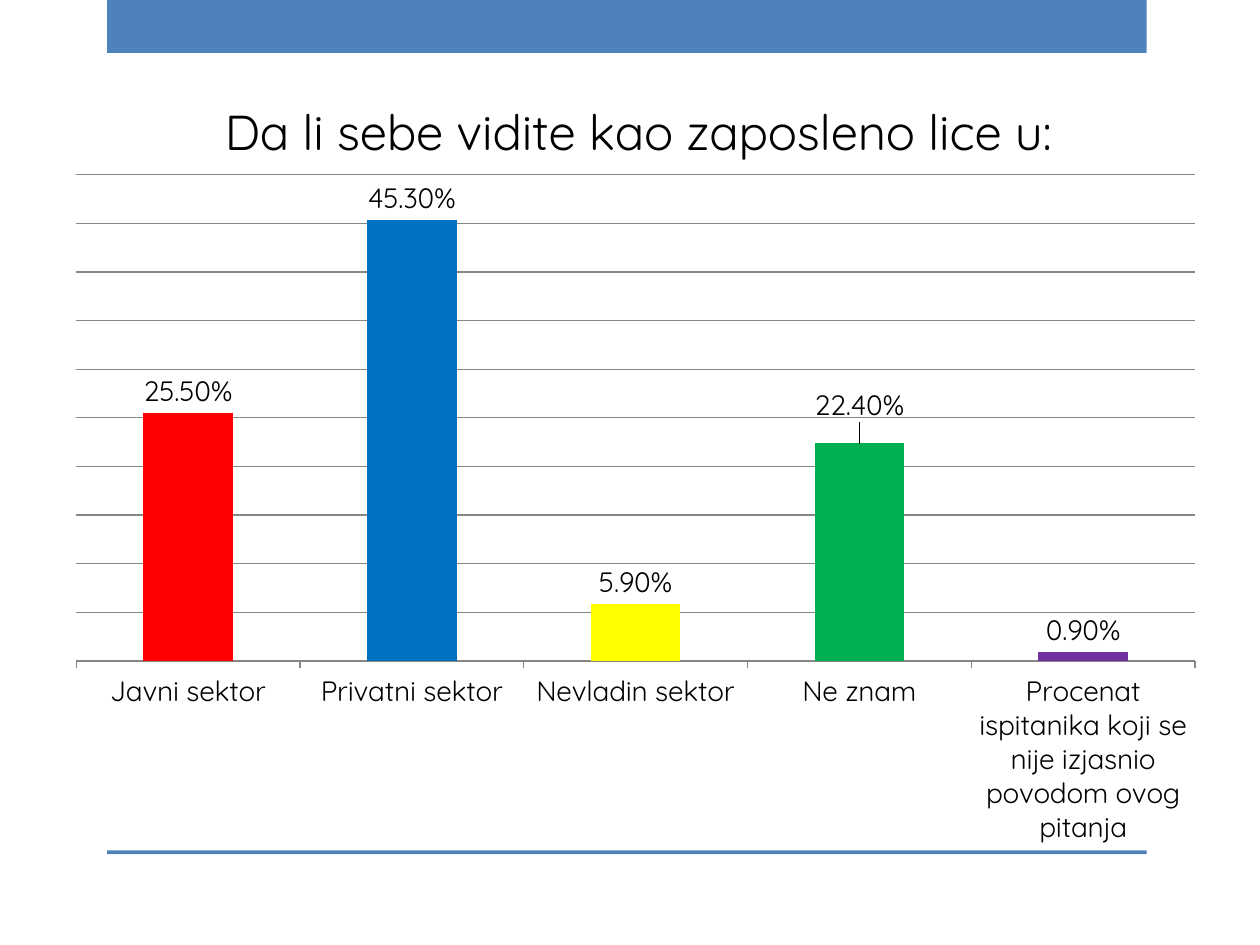
from lxml import etree
from pptx import Presentation
from pptx.chart.data import CategoryChartData
from pptx.dml.color import RGBColor
from pptx.enum.chart import XL_CHART_TYPE, XL_LABEL_POSITION, XL_TICK_MARK
from pptx.enum.shapes import MSO_SHAPE
from pptx.oxml.ns import qn
from pptx.util import Pt

COLUMNS = XL_CHART_TYPE.COLUMN_CLUSTERED
OUTSIDE_END = XL_LABEL_POSITION.OUTSIDE_END
TICK_OUT = XL_TICK_MARK.OUTSIDE
TICK_NONE = XL_TICK_MARK.NONE
RECTANGLE = MSO_SHAPE.RECTANGLE

PX = 9144  # 100 px to the inch
FONT = "Quicksand"
BLUE, GREY, BLACK = "4F81BD", "868686", "000000"
PERCENT = "0.00%"
TITLE = "Da li sebe vidite kao zaposleno lice u:"
ANSWERS = [
    ("Javni sektor", 0.255, "FF0000"),
    ("Privatni sektor", 0.453, "0070C0"),
    ("Nevladin sektor", 0.059, "FFFF00"),
    ("Ne znam", 0.224, "00B050"),
    ("Procenat ispitanika koji se nije izjasnio povodom ovog pitanja", 0.009, "7030A0"),
]
RAISED_LABEL = 3


def rgb(color):
    return RGBColor.from_string(color)


def emu(box):
    return [length * PX for length in box]


def set_font(font, size):
    font.name = FONT
    font.size = Pt(size)
    font.bold = False
    font.color.rgb = rgb(BLACK)


def set_layout(parent, index, **settings):
    """Give a chart part a manual layout, as fractions of the chart."""
    for old in parent.findall(qn("c:layout")):
        parent.remove(old)
    layout = etree.Element(qn("c:layout"))
    manual = etree.SubElement(layout, qn("c:manualLayout"))
    for tag, value in settings.items():
        etree.SubElement(manual, qn("c:" + tag)).set("val", str(value))
    parent.insert(index, layout)


def add_band(page, box):
    band = page.shapes.add_shape(RECTANGLE, *emu(box))
    band.shadow.inherit = False
    band.fill.solid()
    band.fill.fore_color.rgb = rgb(BLUE)
    band.line.fill.background()


def add_frame(page, box):
    """Draw the top band and the bottom rule of the box."""
    left, top, width, height = box
    rule = 3
    add_band(page, (left, top, width, 42))
    add_band(page, (left, top + height - rule, width, rule))


def format_title(chart):
    chart.has_title = True
    para = chart.chart_title.text_frame.paragraphs[0]
    span = para.add_run()
    span.text = TITLE
    set_font(span.font, 28)
    set_layout(chart.chart_title._element, 1, xMode="edge", yMode="edge", x=0.14, y=0.03)


def format_axes(chart):
    categories, values = chart.category_axis, chart.value_axis
    categories.major_tick_mark = TICK_OUT
    categories.minor_tick_mark = TICK_NONE
    set_font(categories.tick_labels.font, 16)
    values.visible = False
    values.minimum_scale, values.maximum_scale, values.major_unit = 0, 0.5, 0.05
    values.has_major_gridlines = True
    for line in (categories.format.line, values.major_gridlines.format.line):
        line.color.rgb = rgb(GREY)
        line.width = Pt(0.75)


def format_columns(plot):
    plot.gap_width = 150
    plot.vary_by_categories = False
    series = plot.series[0]
    for index, (_, _, color) in enumerate(ANSWERS):
        fill = series.points[index].format.fill
        fill.solid()
        fill.fore_color.rgb = rgb(color)

    labels = series.data_labels
    labels.show_value = True
    labels.number_format = PERCENT
    labels.number_format_is_linked = False
    labels.position = OUTSIDE_END
    set_font(labels.font, 16)

    raised = series.points[RAISED_LABEL].data_label
    set_font(raised.font, 16)
    raised.position = OUTSIDE_END
    label = series._element.find(".//" + qn("c:dLbl"))
    set_layout(label, 1, x=0, y=-0.02)


def add_answer_chart(page, box):
    data = CategoryChartData(number_format=PERCENT)
    data.categories = [name for name, _, _ in ANSWERS]
    data.add_series("Series 1", [value for _, value, _ in ANSWERS])
    chart = page.shapes.add_chart(COLUMNS, *emu(box), data).chart
    chart.has_legend = False
    set_font(chart.font, 10)
    format_title(chart)
    format_axes(chart)
    format_columns(chart.plots[0])
    plot_area = chart._chartSpace.find(".//" + qn("c:plotArea"))
    set_layout(plot_area, 0, layoutTarget="inner", xMode="edge", yMode="edge",
               x=0.02, y=0.14, w=0.96, h=0.61)


def main():
    deck = Presentation()
    deck.slide_width, deck.slide_height = emu((1000, 750))
    page = deck.slides.add_slide(deck.slide_layouts[6])
    add_frame(page, (85, 0, 825, 678))
    add_answer_chart(page, (42, 50, 925, 633))
    deck.save("out.pptx")


if __name__ == "__main__":
    main()
